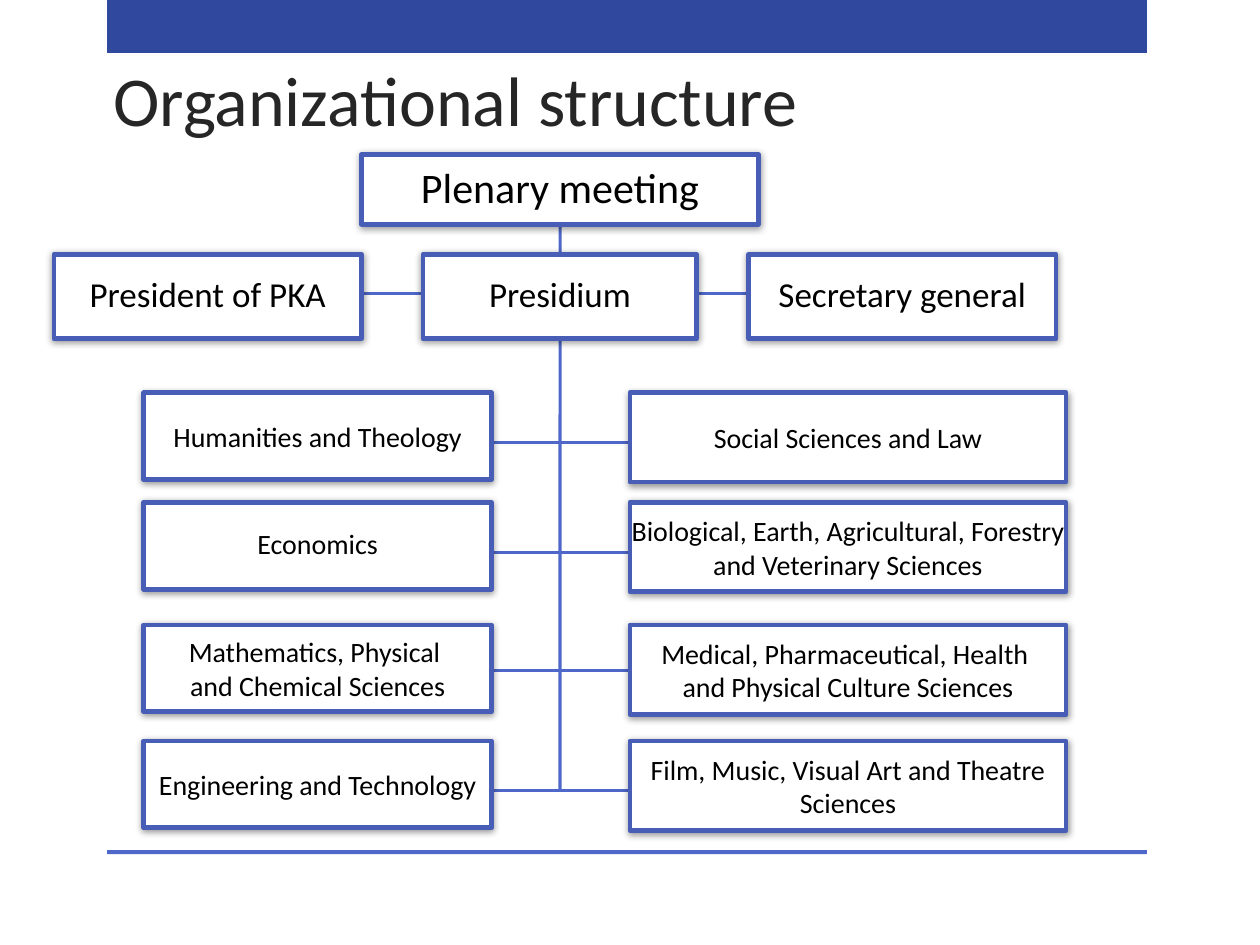
"""Build the organizational structure slide."""
from lxml import etree
from pptx import Presentation
from pptx.dml.color import RGBColor
from pptx.enum.shapes import MSO_CONNECTOR, MSO_SHAPE
from pptx.enum.text import MSO_ANCHOR, PP_ALIGN
from pptx.oxml import parse_xml
from pptx.oxml.ns import qn
from pptx.util import Cm, Pt

RECTANGLE = MSO_SHAPE.RECTANGLE
STRAIGHT = MSO_CONNECTOR.STRAIGHT
MIDDLE, BOTTOM = MSO_ANCHOR.MIDDLE, MSO_ANCHOR.BOTTOM
CENTER, LEFT = PP_ALIGN.CENTER, PP_ALIGN.LEFT
SHADOW = (
    '<a:effectLst xmlns:a="http://schemas.openxmlformats.org/drawingml/2006/main">'
    '<a:outerShdw blurRad="50800" dist="12700" dir="5280000" rotWithShape="0">'
    '<a:srgbClr val="000000"><a:alpha val="40000"/></a:srgbClr>'
    '</a:outerShdw></a:effectLst>'
)


def color(value):
    return RGBColor.from_string(value)


def write(shape, text, size, ink, align, anchor, insets, spacing=1.0):
    frame = shape.text_frame
    margins = ("margin_left", "margin_top", "margin_right", "margin_bottom")
    settings = {"word_wrap": True, "vertical_anchor": anchor}
    settings.update({name: Cm(inset) for name, inset in zip(margins, insets)})
    for name, value in settings.items():
        setattr(frame, name, value)
    para = frame.paragraphs[0]
    para.text = text
    para.alignment = align
    para.line_spacing = spacing
    for name, value in {"name": "Calibri", "size": Pt(size)}.items():
        setattr(para.font, name, value)
    para.font.color.rgb = color(ink)


deck = Presentation()
deck.slide_width, deck.slide_height = Cm(25.4), Cm(19.05)
page = deck.slides.add_slide(deck.slide_layouts[6])

for top, height, fill in ((0, 1.07, "31489F"), (17.14, 0.08, "4E67C8")):
    band = page.shapes.add_shape(RECTANGLE, Cm(2.16), Cm(top), Cm(20.96), Cm(height))
    band.shadow.inherit = False
    band.fill.solid()
    band.fill.fore_color.rgb = color(fill)
    band.line.fill.background()

title = page.shapes.add_textbox(Cm(2.11), Cm(-0.08), Cm(22.86), Cm(2.95))
write(title, "Organizational structure", 40, "262626", LEFT, BOTTOM,
      (0.18, 0.13, 0.18, 0.04))

row_tops = (7.92, 10.13, 12.6, 14.94)
row_lines = (8.92, 11.13, 13.51, 15.93)
left_column = (
    "Humanities and Theology",
    "Economics",
    "Mathematics, Physical \vand Chemical Sciences",
    "Engineering and Technology",
)
right_column = (
    "Social Sciences and Law",
    "Biological, Earth, Agricultural, Forestry and Veterinary Sciences",
    "Medical, Pharmaceutical, Health \vand Physical Culture Sciences",
    "Film, Music, Visual Art and Theatre Sciences",
)
left_edge, left_width, right_edge, right_width = 2.9, 7.01, 12.7, 8.79
spine_x, staff_y = 11.29, 5.92

boxes = [
    ("Plenary meeting", 7.29, 3.12, 8.0, 1.4, 24),
    ("President of PKA", 1.09, 5.13, 6.2, 1.7, 20),
    ("Presidium", 8.53, 5.13, 5.52, 1.7, 20),
    ("Secretary general", 15.09, 5.13, 6.2, 1.7, 20),
]
for top, left_text, right_text in zip(row_tops, left_column, right_column):
    boxes.append((left_text, left_edge, top, left_width, 1.75, 16))
    boxes.append((right_text, right_edge, top, right_width, 1.8, 16))

lines = [(6.71, staff_y, 15.49, staff_y), (spine_x, 4.52, spine_x, row_lines[-1])]
lines += [(left_edge + left_width, y, right_edge, y) for y in row_lines]
connectors = []
for ends in lines:
    connector = page.shapes.add_connector(STRAIGHT, *[Cm(end) for end in ends])
    connector.line.color.rgb = color("4E67C8")
    connector.line.width = Pt(1.75)
    etree.SubElement(connector._element.spPr, qn("a:effectLst"))
    connectors.append(connector)
spine = connectors[1]

for text, left, top, width, height, size in boxes:
    box = page.shapes.add_shape(RECTANGLE, Cm(left), Cm(top), Cm(width), Cm(height))
    box.fill.solid()
    box.fill.fore_color.rgb = color("FFFFFF")
    box.line.color.rgb = color("475DB6")
    box.line.width = Pt(2.75)
    box._element.spPr.append(parse_xml(SHADOW))
    spacing = 0.9 if size > 16 or text == "Economics" else 1.0
    write(box, text, size, "000000", CENTER, MIDDLE, (0.02,) * 4, spacing)
    if text == "Plenary meeting":
        spine.begin_connect(box, 2)

deck.save("out.pptx")
